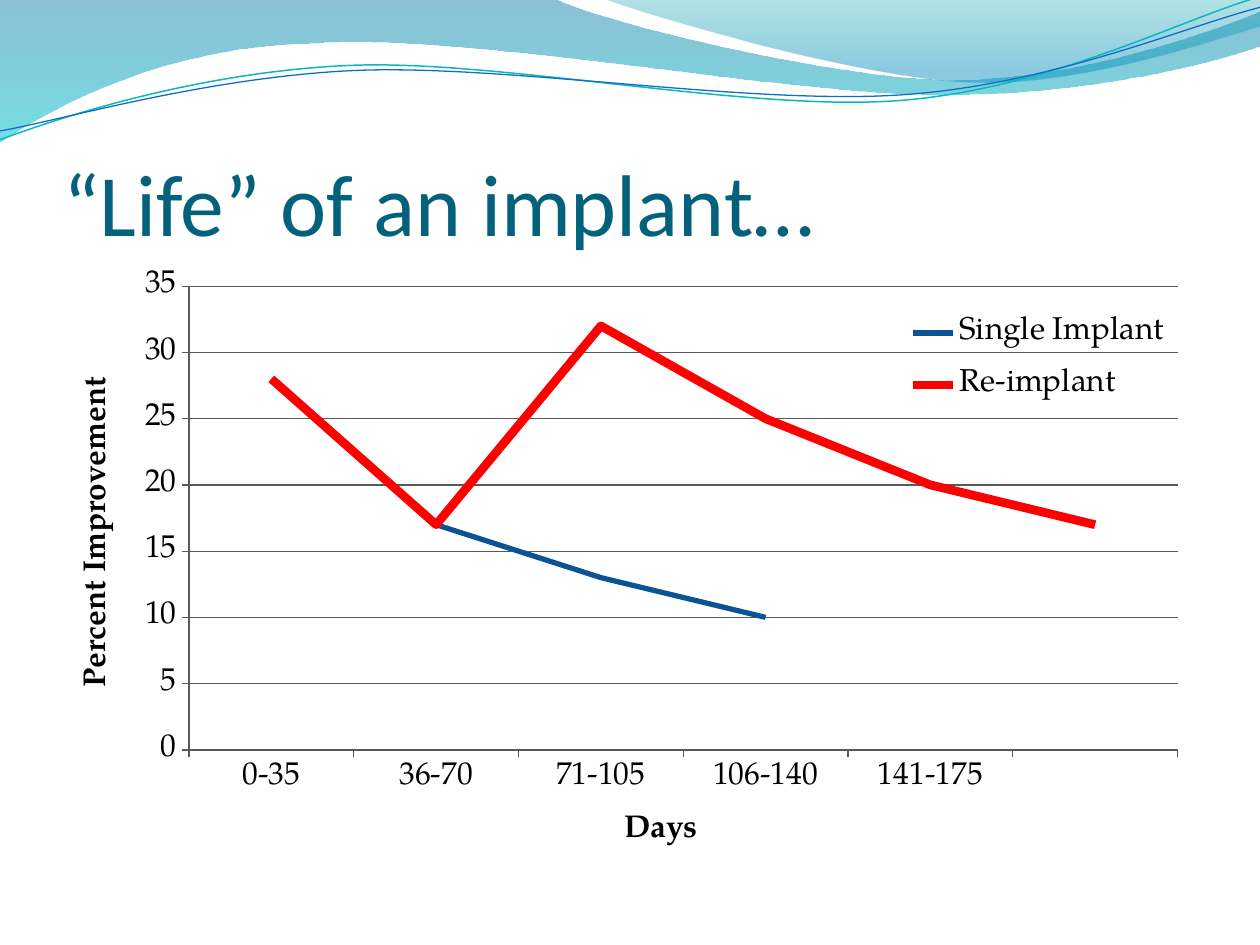
"""Build the implant improvement slide with its wave banner and line chart."""
from dataclasses import dataclass

from lxml import etree
from pptx import Presentation, oxml
from pptx.chart import data
from pptx.dml.color import RGBColor
from pptx.enum import chart as charts, text
from pptx.oxml import ns
from pptx.util import Cm, Pt


@dataclass(frozen=True)
class Theme:
    title_color: str = "04617B"
    ink: str = "000000"
    grid: str = "595959"
    single: str = "0B5394"
    reimplant: str = "FF0000"
    teal_line: str = "0AB8BF"
    blue_line: str = "0F6FC6"
    back_wave: tuple = ((0, "0074A1", 45), (1, "00C6CF", 55))
    front_wave: tuple = ((0, "00A1A9", 30), (0.8, "008BBF", 45))
    title_font: str = "Calibri"
    chart_font: str = "TeX Gyre Pagella"
    title_size: int = 50
    chart_size: int = 18


theme = Theme()


def write(frame, content, *, size, color, font, bold=False):
    paragraph = frame.paragraphs[0]
    paragraph.text = content
    style = paragraph.runs[0].font
    style.size, style.name, style.bold = Pt(size), font, bold
    style.color.rgb = RGBColor.from_string(color)
    return paragraph


def trace(shapes, start, segments, closed):
    builder = shapes.build_freeform(Cm(start[0]), Cm(start[1]))
    for segment in segments:
        corners = zip(segment[::2], segment[1::2])
        builder.add_line_segments([(Cm(x), Cm(y)) for x, y in corners], close=False)
    if closed:
        builder.add_line_segments([], close=True)
    outline = builder.convert_to_shape()
    outline.shadow.inherit = False
    steps = iter(outline.element.xpath(".//a:lnTo"))
    for segment in segments:
        first = next(steps)
        if len(segment) == 6:
            curve = etree.Element(ns.qn("a:cubicBezTo"))
            first.addprevious(curve)
            for step in (first, next(steps), next(steps)):
                curve.append(step[0])
                step.getparent().remove(step)
    return outline


deck = Presentation()
deck.slide_width, deck.slide_height = Cm(25.4), Cm(19.05)
slide = deck.slides.add_slide(deck.slide_layouts[5])

waves = [
    ((0, 0), [(11.18, -0.03), (12.09, 0.43, 16.87, 1.6, 19.25, 1.6),
              (21.67, 1.6, 24.33, 0.66, 25.4, 0.23), (25.43, 0.91),
              (24.97, 1.12, 22.1, 1.93, 18.95, 1.91),
              (15.8, 1.91, 9.7, 0.71, 6.53, 0.86),
              (3.28, 0.91, 1.17, 2.11, -0.03, 2.87), (0, 0)], theme.back_wave),
    ((12.17, -0.03), [(12.93, 0.28, 17.32, 1.57, 19.53, 1.65),
                      (21.74, 1.75, 24.41, 0.81, 25.4, 0.53), (25.4, 0),
                      (12.17, -0.03)], theme.front_wave),
]
for start, segments, stops in waves:
    wave = trace(slide.shapes, start, segments, True)
    wave.line.fill.background()
    wave.fill.gradient()
    wave.fill.gradient_angle = 270
    for stop, (position, color, _) in zip(wave.fill.gradient_stops, stops):
        stop.position = position
        stop.color.rgb = RGBColor.from_string(color)
    for tint, (_, _, opacity) in zip(wave.element.xpath(".//a:gs/a:srgbClr"), stops):
        etree.SubElement(tint, ns.qn("a:alpha")).set("val", str(opacity * 1000))

ripples = [
    ((0, 2.82), [(1.22, 2.36, 4.01, 1.45, 7.04, 1.32),
                 (10.03, 1.19, 15.06, 2.26, 18.11, 2.03),
                 (21.16, 1.8, 23.83, 0.38, 25.35, -0.05)], theme.teal_line, 0.85),
    ((0, 2.64), [(1.19, 2.44, 4.17, 1.55, 7.19, 1.42),
                 (10.24, 1.3, 15.16, 2.13, 18.21, 1.91),
                 (21.23, 1.7, 23.9, 0.53, 25.4, 0.15)], theme.blue_line, 0.75),
]
for start, segments, color, width in ripples:
    ripple = trace(slide.shapes, start, segments, False)
    ripple.fill.background()
    ripple.line.color.rgb = RGBColor.from_string(color)
    ripple.line.width = Pt(width)

title = slide.shapes.title
title.left, title.top, title.width, title.height = Cm(1.27), Cm(1.96), Cm(22.86), Cm(3.17)
heading = title.text_frame
heading.margin_left = heading.margin_right = heading.margin_bottom = 0
heading.margin_top = Cm(0.13)
heading.vertical_anchor = text.MSO_ANCHOR.BOTTOM
heading.auto_size = text.MSO_AUTO_SIZE.NONE
write(heading, "“Life” of an implant…", size=theme.title_size, color=theme.title_color,
      font=theme.title_font).alignment = text.PP_ALIGN.LEFT
title.element.getparent().append(title.element)

improvement = data.CategoryChartData()
improvement.categories = ["0-35", "36-70", "71-105", "106-140", "141-175", ""]
improvement.add_series("Single Implant", (28, 17, 13, 10, None, None))
improvement.add_series("Re-implant", (28, 17, 32, 25, 20, 17))
chart_width, chart_height = 22.86, 12.19
chart = slide.shapes.add_chart(charts.XL_CHART_TYPE.LINE, Cm(1.27), Cm(5.38),
                               Cm(chart_width), Cm(chart_height), improvement).chart
chart.has_title = False
chart.font.size = Pt(theme.chart_size)
chart.font.name = theme.chart_font
chart.font.color.rgb = RGBColor.from_string(theme.ink)
chart.plots[0].vary_by_categories = False
for unnamed in chart.element.xpath(".//c:cat//c:pt[@idx='5']"):
    unnamed.getparent().remove(unnamed)

for series, color, width in zip(chart.series, (theme.single, theme.reimplant), (3, 5)):
    series.smooth = False
    series.format.line.color.rgb = RGBColor.from_string(color)
    series.format.line.width = Pt(width)

days, percent = chart.category_axis, chart.value_axis
percent.minimum_scale, percent.maximum_scale, percent.major_unit = 0, 35, 5
percent.has_major_gridlines = True
for axis, label in ((days, "Days"), (percent, "Percent Improvement")):
    axis.major_tick_mark = charts.XL_TICK_MARK.OUTSIDE
    axis.minor_tick_mark = charts.XL_TICK_MARK.NONE
    write(axis.axis_title.text_frame, label, size=theme.chart_size, color=theme.ink,
          font=theme.chart_font, bold=True)
for rule in (days.format.line, percent.format.line, percent.major_gridlines.format.line):
    rule.color.rgb = RGBColor.from_string(theme.grid)
    rule.width = Pt(0.75)
for turned in chart.element.xpath(".//c:valAx/c:title//a:bodyPr"):
    turned.set("rot", "-5400000")
    turned.set("vert", "horz")

chart.has_legend = True
chart.legend.position = charts.XL_LEGEND_POSITION.TOP
chart.legend.include_in_layout = False
chart.legend.font.size = Pt(theme.chart_size)
placements = (("plotArea", 0, "<c:layoutTarget val='inner'/>", (2.54, 0.39, 19.93, 9.35)),
              ("legend", 1, "", (16.92, 0.61, 5.49, 2.5)))
for part, index, target, box in placements:
    region = chart.element.xpath(f".//c:{part}")[0]
    for old in region.findall(ns.qn("c:layout")):
        region.remove(old)
    modes = "".join(f"<c:{side}Mode val='edge'/>" for side in "xy")
    sizes = "".join(f"<c:{side} val='{length / whole:.4f}'/>" for side, length, whole
                    in zip("xywh", box, (chart_width, chart_height) * 2))
    region.insert(index, oxml.parse_xml(
        f"<c:layout {ns.nsdecls('c')}><c:manualLayout>{target}{modes}{sizes}"
        "</c:manualLayout></c:layout>"))

deck.save("out.pptx")
